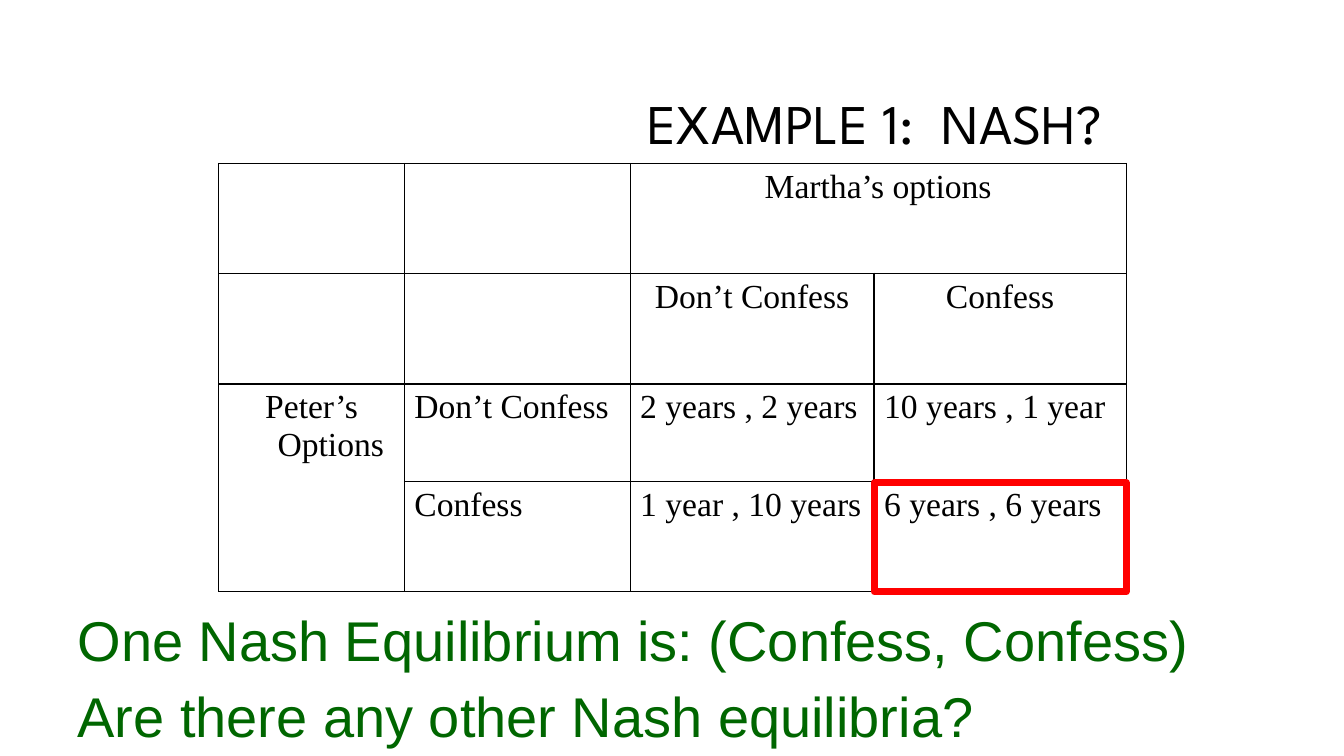
from lxml.etree import SubElement
from pptx import Presentation
from pptx.dml.color import RGBColor
from pptx.enum.shapes import MSO_SHAPE as Shape
from pptx.enum.text import MSO_ANCHOR as Anchor, PP_ALIGN as Align
from pptx.oxml.ns import qn
from pptx.util import Inches, Pt


def rgb(value):
    return RGBColor.from_string(value)


def write(frame, *lines, font, size, color="000000", align=None, gap=0, spacing=None, hanging=0):
    frame.word_wrap = True
    for number, line in enumerate(lines):
        paragraph = frame.add_paragraph() if number else frame.paragraphs[0]
        paragraph.alignment = align
        paragraph.line_spacing = spacing
        if number:
            paragraph.space_before = Pt(gap)
        if hanging:
            properties = paragraph._p.get_or_add_pPr()
            properties.set("marL", str(Inches(hanging)))
            properties.set("indent", str(-Inches(hanging)))
        run = paragraph.add_run()
        run.text = line
        run.font.name = font
        run.font.size = Pt(size)
        run.font.color.rgb = rgb(color)


prs = Presentation()
prs.slide_width, prs.slide_height = Inches(13.33), Inches(7.5)
slide = prs.slides.add_slide(prs.slide_layouts[5])

title = slide.shapes.title
title.left, title.top, title.width, title.height = map(Inches, (0.67, 0.5, 10.5, 1.5))
title.text_frame.vertical_anchor = Anchor.MIDDLE
write(title.text_frame, "EXAMPLE 1:  NASH? ", font="League Spartan", size=40,
      align=Align.RIGHT, spacing=0.9)

payoffs = [
    ["", "", "Martha’s options", ""],
    ["", "", "Don’t Confess", "Confess"],
    ["Peter’s Options", "Don’t Confess", "2 years , 2 years", "10 years , 1 year"],
    ["", "Confess", "1 year , 10 years", "6 years , 6 years"],
]
column_widths = [1.84, 2.24, 2.42, 2.5]
row_heights = [1.09, 1.1, 0.97, 1.09]
matrix = slide.shapes.add_table(4, 4, Inches(2.17), Inches(1.62), Inches(9), Inches(4.25)).table
matrix.first_row = matrix.horz_banding = False
for column, width in zip(matrix.columns, column_widths):
    column.width = Inches(width)
for row, height in zip(matrix.rows, row_heights):
    row.height = Inches(height)
matrix.cell(0, 2).merge(matrix.cell(0, 3))
matrix.cell(2, 0).merge(matrix.cell(3, 0))

for r, options in enumerate(payoffs):
    for c, option in enumerate(options):
        cell = matrix.cell(r, c)
        if option:
            write(cell.text_frame, option, font="Times New Roman", size=24, hanging=0.38,
                  align=Align.CENTER if r < 2 or c == 0 else Align.LEFT)
        borders = cell._tc.get_or_add_tcPr()
        for side, edge in (("lnL", c), ("lnR", c + 1), ("lnT", r), ("lnB", r + 1)):
            border = SubElement(borders, qn(f"a:{side}"), w=str(Pt(1 if edge in (2, 3) else 0.75)))
            ink = SubElement(border, qn("a:solidFill"))
            SubElement(ink, qn("a:srgbClr"), val="000000")
        cell.fill.background()

equilibrium = slide.shapes.add_shape(Shape.RECTANGLE, Inches(8.67), Inches(4.79),
                                     Inches(2.5), Inches(1.08))
equilibrium.shadow.inherit = False
equilibrium.fill.background()
equilibrium.line.color.rgb = rgb("FF0000")
equilibrium.line.width = Pt(5)

conclusion = slide.shapes.add_textbox(Inches(0.67), Inches(5.96), Inches(11.51), Inches(1.45))
write(conclusion.text_frame, "One Nash Equilibrium is: (Confess, Confess)",
      "Are there any other Nash equilibria?", font="Arial", size=40, color="006600", gap=6)

prs.save("out.pptx")
